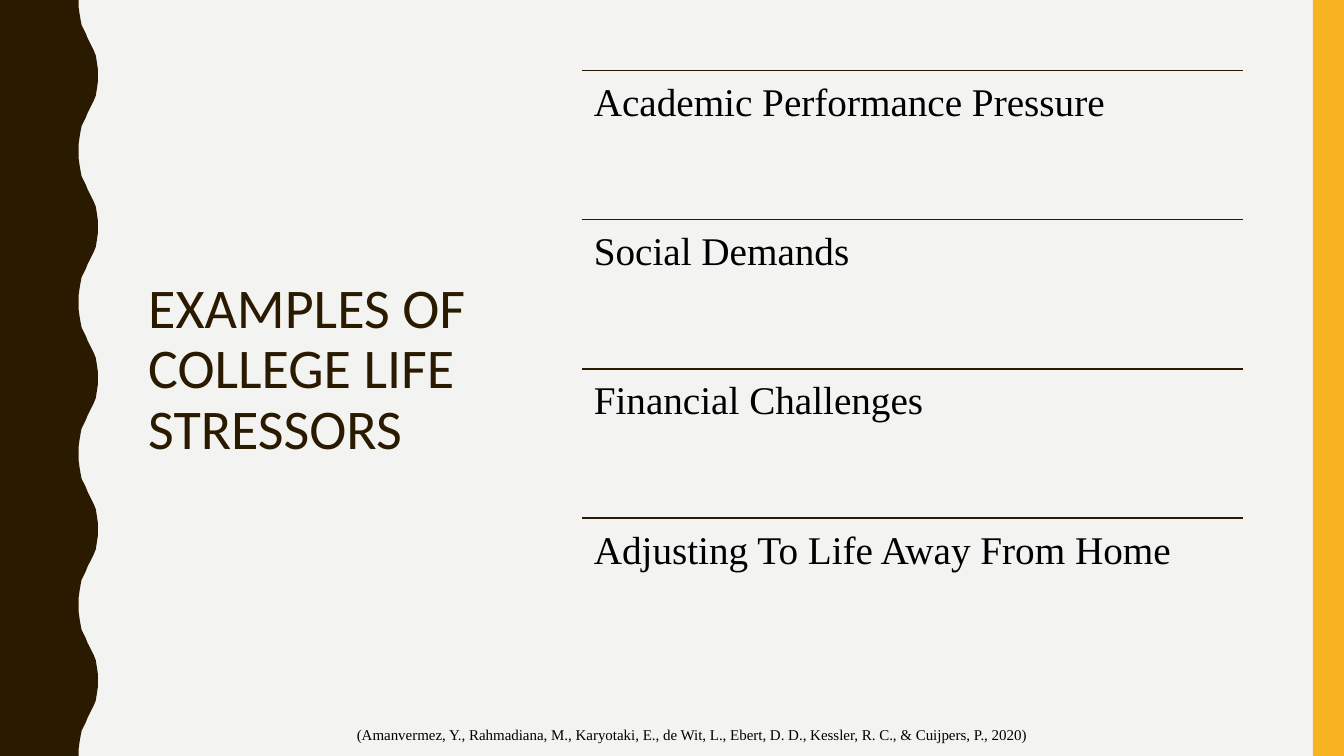
from dataclasses import dataclass

from pptx import Presentation
from pptx.dml.color import RGBColor
from pptx.enum.shapes import MSO_CONNECTOR, MSO_SHAPE
from pptx.enum.text import MSO_ANCHOR, MSO_AUTO_SIZE, PP_ALIGN
from pptx.oxml.ns import qn
from pptx.slide import Slide
from pptx.text.text import TextFrame
from pptx.util import Inches, Pt
from lxml.etree import SubElement


@dataclass(frozen=True)
class Theme:
    background: RGBColor = RGBColor.from_string("F3F3F2")
    brown: RGBColor = RGBColor.from_string("2A1A00")
    amber: RGBColor = RGBColor.from_string("F8B323")
    black: RGBColor = RGBColor.from_string("000000")
    title_font: str = "Calibri"
    body_font: str = "Times New Roman"
    title_size: float = 40
    stressor_size: float = 28
    citation_size: float = 10.7
    rule_width: float = 1


@dataclass(frozen=True)
class Box:
    left: float
    top: float
    width: float
    height: float

    def lengths(self) -> tuple:
        return tuple(Inches(v) for v in (self.left, self.top, self.width, self.height))


@dataclass(frozen=True)
class TextStyle:
    font: str
    size: float
    color: RGBColor
    inset_x: float
    inset_y: float
    anchor: MSO_ANCHOR = MSO_ANCHOR.TOP


@dataclass(frozen=True)
class Stressor:
    label: str
    box: Box


THEME = Theme()
SLIDE_WIDTH, SLIDE_HEIGHT = 13.33, 7.5
TITLE_STYLE = TextStyle(THEME.title_font, THEME.title_size, THEME.brown, 0.1, 0.05, MSO_ANCHOR.MIDDLE)
STRESSOR_STYLE = TextStyle(THEME.body_font, THEME.stressor_size, THEME.black, 0.12, 0.12)
CITATION_STYLE = TextStyle(THEME.body_font, THEME.citation_size, THEME.black, 0.1, 0.1)

TITLE = "EXAMPLES OF COLLEGE LIFE STRESSORS"
CITATION = (
    "(Amanvermez, Y., Rahmadiana, M., Karyotaki, E., de Wit, L., Ebert, D. D., "
    "Kessler, R. C., & Cuijpers, P., 2020)"
)
ROW_HEIGHT = 1.48
STRESSORS = [
    Stressor(label, Box(5.77, 0.7 + row * ROW_HEIGHT, 6.56, ROW_HEIGHT))
    for row, label in enumerate([
        "Academic Performance Pressure",
        "Social Demands",
        "Financial Challenges",
        "Adjusting To Life Away From Home",
    ])
]

WAVE_PERIOD = 1.5
# Edge of the wave from trough to crest, as (x, y)
WAVE_RISE = [
    (0.78, 0), (0.78, 0.07), (0.79, 0.14), (0.8, 0.2), (0.81, 0.25),
    (0.83, 0.29), (0.85, 0.33), (0.87, 0.38), (0.89, 0.42), (0.91, 0.46),
    (0.93, 0.5), (0.95, 0.55), (0.96, 0.61), (0.97, 0.68), (0.97, 0.75),
]


def write_text(frame: TextFrame, text: str, style: TextStyle) -> None:
    frame_format = {
        "word_wrap": True,
        "auto_size": MSO_AUTO_SIZE.NONE,
        "vertical_anchor": style.anchor,
        "margin_left": Inches(style.inset_x),
        "margin_right": Inches(style.inset_x),
        "margin_top": Inches(style.inset_y),
        "margin_bottom": Inches(style.inset_y),
    }
    paragraph = frame.paragraphs[0]
    run = paragraph.add_run()
    run.text = text
    formats = [
        (frame, frame_format),
        (paragraph, {"alignment": PP_ALIGN.LEFT, "line_spacing": 0.9}),
        (run.font, {"name": style.font, "size": Pt(style.size)}),
    ]
    for target, values in formats:
        for attribute, value in values.items():
            setattr(target, attribute, value)
    run.font.color.rgb = style.color


def add_text(slide: Slide, text: str, box: Box, style: TextStyle) -> None:
    write_text(slide.shapes.add_textbox(*box.lengths()).text_frame, text, style)


def paint(shape, color: RGBColor) -> None:
    """Give a shape a flat fill without outline or shadow."""
    shape.fill.solid()
    shape.fill.fore_color.rgb = color
    shape.line.fill.background()
    shape.shadow.inherit = False


def add_wave(slide: Slide) -> None:
    """Draw the left band, whose right edge repeats one wave down the slide."""
    fall = [(x, WAVE_PERIOD - y) for x, y in reversed(WAVE_RISE[:-1])]
    wave = WAVE_RISE + fall
    edge = [
        (x, y + cycle * WAVE_PERIOD)
        for cycle in range(round(SLIDE_HEIGHT / WAVE_PERIOD))
        for x, y in wave
    ]
    outline = edge + [(0, SLIDE_HEIGHT)]
    builder = slide.shapes.build_freeform(0, 0)
    builder.add_line_segments([(Inches(x), Inches(y)) for x, y in outline], close=True)
    paint(builder.convert_to_shape(), THEME.brown)


def add_stressor(slide: Slide, stressor: Stressor) -> None:
    left, top, width, _ = stressor.box.lengths()
    rule = slide.shapes.add_connector(MSO_CONNECTOR.STRAIGHT, left, top, left + width, top)
    rule.line.color.rgb = THEME.brown
    rule.line.width = Pt(THEME.rule_width)
    SubElement(rule._element.spPr, qn("a:effectLst"))
    add_text(slide, stressor.label, stressor.box, STRESSOR_STYLE)


def place_title(slide: Slide, box: Box) -> None:
    title = slide.shapes.title
    title.left, title.top, title.width, title.height = box.lengths()
    write_text(title.text_frame, TITLE, TITLE_STYLE)


def main() -> None:
    deck = Presentation()
    deck.slide_width, deck.slide_height = Inches(SLIDE_WIDTH), Inches(SLIDE_HEIGHT)
    slide = deck.slides.add_slide(deck.slide_layouts.get_by_name("Title Only"))
    slide.background.fill.solid()
    slide.background.fill.fore_color.rgb = THEME.background

    add_wave(slide)
    side_bar = Box(13.02, 0, 0.31, SLIDE_HEIGHT)
    paint(slide.shapes.add_shape(MSO_SHAPE.RECTANGLE, *side_bar.lengths()), THEME.amber)
    place_title(slide, Box(1.37, 0.71, 3.73, 5.93))
    for stressor in STRESSORS:
        add_stressor(slide, stressor)
    add_text(slide, CITATION, Box(3.44, 7.12, 7.72, 0.36), CITATION_STYLE)
    deck.save("out.pptx")


if __name__ == "__main__":
    main()
